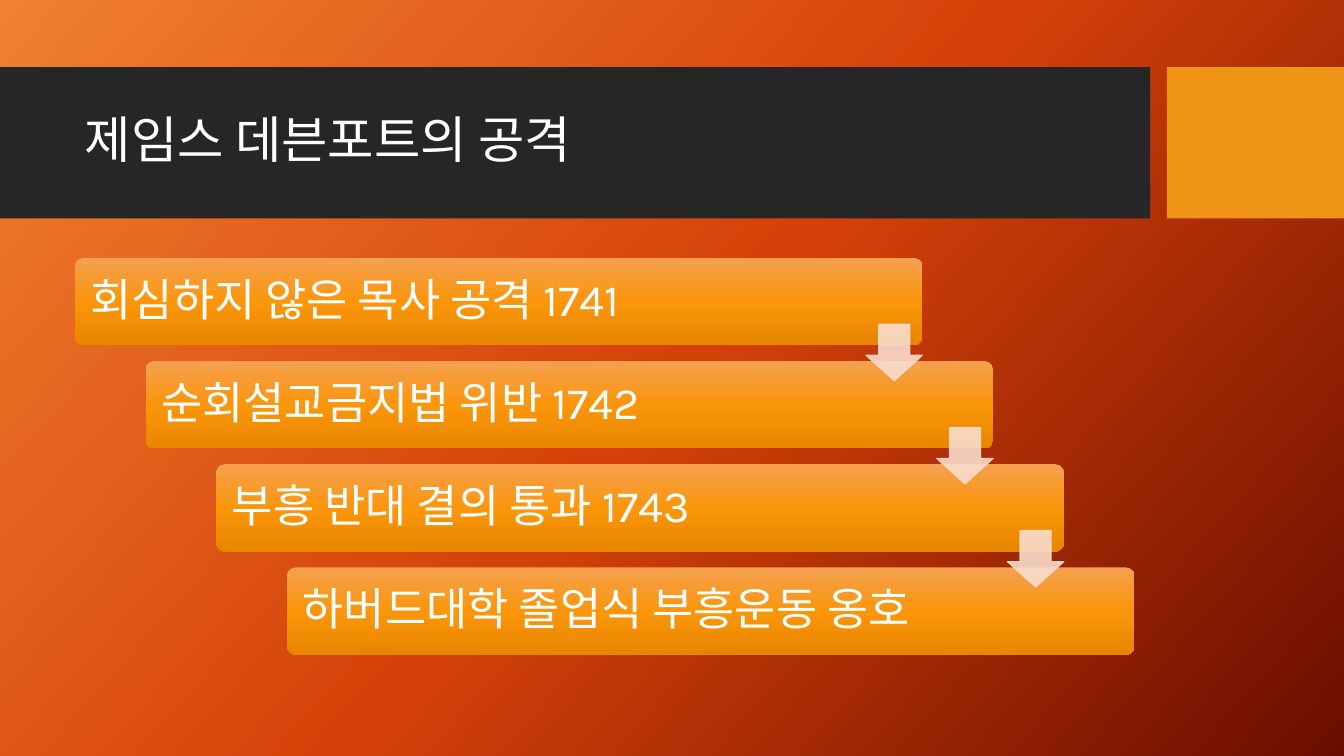
import copy

import pptx
import pptx.dml.color
import pptx.enum.shapes
import pptx.enum.text
import pptx.oxml
import pptx.oxml.ns
import pptx.util

Pt = pptx.util.Pt
RGBColor = pptx.dml.color.RGBColor
SHAPE = pptx.enum.shapes.MSO_SHAPE

# Content
TITLE = "제임스 데븐포트의 공격"
STEPS = [
    "회심하지 않은 목사 공격 1741",
    "순회설교금지법 위반 1742",
    "부흥 반대 결의 통과 1743",
    "하버드대학 졸업식 부흥운동 옹호",
]

# Colours
WHITE = RGBColor(0xFF, 0xFF, 0xFF)
CHARCOAL = RGBColor(0x26, 0x26, 0x26)
AMBER = RGBColor(0xF0, 0x94, 0x15)
BLUSH = RGBColor(0xF9, 0xDC, 0xCC)
BACKGROUND = [RGBColor(0xF1, 0x80, 0x31), RGBColor(0xD5, 0x42, 0x09), RGBColor(0x6A, 0x0D, 0x00)]
BAR = [RGBColor(0xF4, 0xA0, 0x50), RGBColor(0xFB, 0x96, 0x0A), RGBColor(0xE8, 0x86, 0x00)]

# Layout in points
SLIDE_WIDTH, SLIDE_HEIGHT = 960, 540
BANDS = [((0, 48, 821.5, 108), CHARCOAL), ((833.5, 48, 126.5, 108), AMBER)]
TITLE_BOX = (53.3, 59, 756.7, 85)
BAR_LEFT, BAR_TOP, BAR_WIDTH, BAR_HEIGHT = 53.5, 184.2, 605.5, 62.4
STEP_X, STEP_Y = 50.5, 73.7
ARROW_SIZE, ARROW_DROP = 40.5, 47.3
BAR_INSET = 9.4


def apply_gradient(fill, element, colours, angle):
    fill.gradient()
    fill.gradient_angle = angle
    stop_list = next(element.iter(pptx.oxml.ns.qn("a:gsLst")))
    stop_list.append(copy.deepcopy(stop_list[0]))
    for index, (stop, colour) in enumerate(zip(fill.gradient_stops, colours)):
        stop.color.rgb = colour
        stop.position = index / (len(colours) - 1)


def add_shape(slide, kind, box, colour=None):
    shape = slide.shapes.add_shape(kind, *map(Pt, box))
    shape.shadow.inherit = False
    shape.line.fill.background()
    if colour is not None:
        shape.fill.solid()
        shape.fill.fore_color.rgb = colour
    return shape


def write_text(shape, text, size, inset_x, inset_y):
    frame = shape.text_frame
    frame.text = text
    paragraph = frame.paragraphs[0]
    formats = [
        (frame, {
            "word_wrap": True,
            "auto_size": pptx.enum.text.MSO_AUTO_SIZE.NONE,
            "vertical_anchor": pptx.enum.text.MSO_ANCHOR.MIDDLE,
            "margin_left": Pt(inset_x), "margin_right": Pt(inset_x),
            "margin_top": Pt(inset_y), "margin_bottom": Pt(inset_y),
        }),
        (paragraph, {"alignment": pptx.enum.text.PP_ALIGN.LEFT, "line_spacing": 0.9}),
        (paragraph.runs[0].font, {"name": "Karla", "size": Pt(size)}),
    ]
    for target, values in formats:
        for name, value in values.items():
            setattr(target, name, value)
    paragraph.runs[0].font.color.rgb = WHITE


def main():
    presentation = pptx.Presentation()
    presentation.slide_width = Pt(SLIDE_WIDTH)
    presentation.slide_height = Pt(SLIDE_HEIGHT)
    slide = presentation.slides.add_slide(presentation.slide_layouts[5])
    apply_gradient(slide.background.fill, slide.element, BACKGROUND, 318)

    # Header bands with the title in front
    for box, colour in BANDS:
        add_shape(slide, SHAPE.RECTANGLE, box, colour)
    title = slide.shapes.title
    title.left, title.top, title.width, title.height = map(Pt, TITLE_BOX)
    write_text(title, TITLE, 36, 7.2, 3.6)
    slide.shapes.element.append(title.element)

    # Staircase of bars
    corners = [(BAR_LEFT + i * STEP_X, BAR_TOP + i * STEP_Y) for i in range(len(STEPS))]
    for (left, top), text in zip(corners, STEPS):
        bar = add_shape(slide, SHAPE.ROUNDED_RECTANGLE, (left, top, BAR_WIDTH, BAR_HEIGHT))
        bar.adjustments[0] = 0.1
        apply_gradient(bar.fill, bar.element, BAR, 270)
        write_text(bar, text, 32, BAR_INSET, BAR_INSET)

    # Arrows from each bar to the next
    for left, top in corners[:-1]:
        box = (left + BAR_WIDTH - ARROW_SIZE, top + ARROW_DROP, ARROW_SIZE, ARROW_SIZE)
        arrow = add_shape(slide, SHAPE.DOWN_ARROW, box, BLUSH)
        arrow.adjustments[0] = 0.45
        arrow.adjustments[1] = 0.55
        # The head is 45 % of the height, the shaft 55 % of the width
        arrow.adjustments[0], arrow.adjustments[1] = 0.55, 0.45
        arrow.line.color.rgb = BLUSH
        arrow.line.width = Pt(0.75)
        for colour in arrow.element.spPr.iter(pptx.oxml.ns.qn("a:srgbClr")):
            alpha = pptx.oxml.parse_xml(f'<a:alpha {pptx.oxml.ns.nsdecls("a")} val="90000"/>')
            colour.append(alpha)

    presentation.save("out.pptx")


if __name__ == "__main__":
    main()
